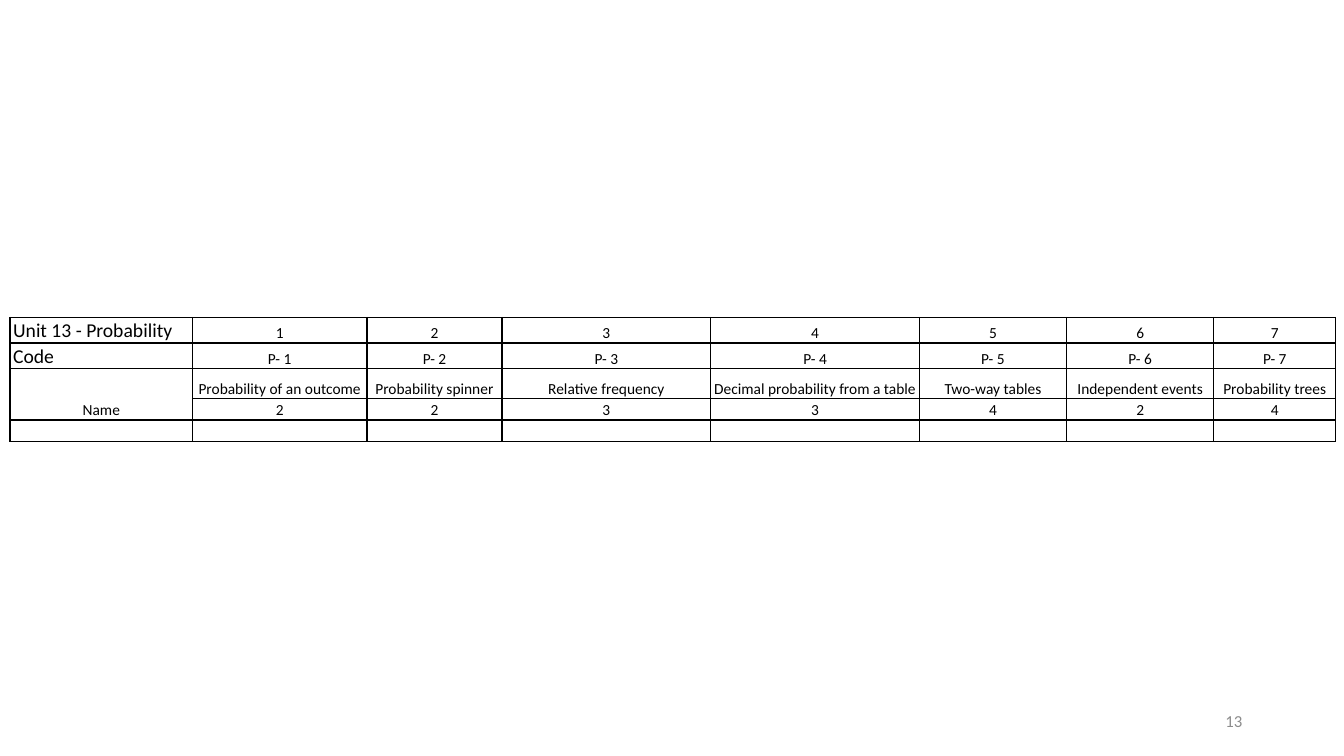
from lxml import etree
from pptx import Presentation
from pptx import util as u
from pptx.dml.color import RGBColor
from pptx.enum import text
from pptx.oxml import ns


def paint(font, size, color):
    font.name = "Calibri"
    font.size = u.Pt(size)
    font.color.rgb = RGBColor.from_string(color)


def border(cell, color, width):
    props = cell._tc.get_or_add_tcPr()
    for side in ("L", "R", "T", "B"):
        line = etree.SubElement(props, ns.qn("a:ln" + side), w=str(u.Pt(width)))
        fill = etree.SubElement(line, ns.qn("a:solidFill"))
        etree.SubElement(fill, ns.qn("a:srgbClr"), val=color)


deck = Presentation()
deck.slide_width = u.Inches(13.33)
deck.slide_height = u.Inches(7.5)
slide = deck.slides.add_slide(deck.slide_layouts[6])

topics = [
    ("Probability of an outcome", 2),
    ("Probability spinner", 2),
    ("Relative frequency", 3),
    ("Decimal probability from a table", 3),
    ("Two-way tables", 4),
    ("Independent events", 2),
    ("Probability trees", 4),
]
count = len(topics)
rows = [
    ["Unit 13 - Probability"] + [str(n + 1) for n in range(count)],
    ["Code"] + [f"P- {n + 1}" for n in range(count)],
    ["Name"] + [name for name, marks in topics],
    [""] + [str(marks) for name, marks in topics],
    [""] * (count + 1),
]
widths = [1.81, 1.73, 1.34, 2.07, 2.07, 1.46, 1.46, 1.21]
heights = [0.25, 0.25, 0.3, 0.21, 0.21]

frame = slide.shapes.add_table(
    len(rows), len(widths), u.Inches(0.1), u.Inches(3.15),
    u.Inches(sum(widths)), u.Inches(sum(heights)))
table = frame.table
table.first_row = False
table.horz_banding = False
for column, width in zip(table.columns, widths):
    column.width = u.Inches(width)

for r, row in enumerate(rows):
    table.rows[r].height = u.Inches(heights[r])
    for c, words in enumerate(row):
        cell = table.cell(r, c)
        head = c == 0 and r < 2
        size = 14 if head else 11
        cell.margin_left = cell.margin_right = u.Inches(0.03)
        cell.margin_top = cell.margin_bottom = 0
        cell.vertical_anchor = text.MSO_ANCHOR.BOTTOM
        border(cell, "000000", 1)
        cell.fill.background()
        para = cell.text_frame.paragraphs[0]
        para.text = words
        para.alignment = text.PP_ALIGN.LEFT if head else text.PP_ALIGN.CENTER
        if words:
            para.line_spacing = 1.07
            paint(para.runs[0].font, size, "000000")
        else:
            etree.SubElement(para._p, ns.qn("a:endParaRPr"), sz=str(size * 100))
table.cell(2, 0).merge(table.cell(3, 0))

box = slide.shapes.add_textbox(
    u.Inches(9.42), u.Inches(6.95), u.Inches(3), u.Inches(0.4))
page = box.text_frame
page.word_wrap = True
page.vertical_anchor = text.MSO_ANCHOR.MIDDLE
page.text = "13"
page.paragraphs[0].alignment = text.PP_ALIGN.RIGHT
paint(page.paragraphs[0].runs[0].font, 12, "8C8C8C")

deck.save("out.pptx")
